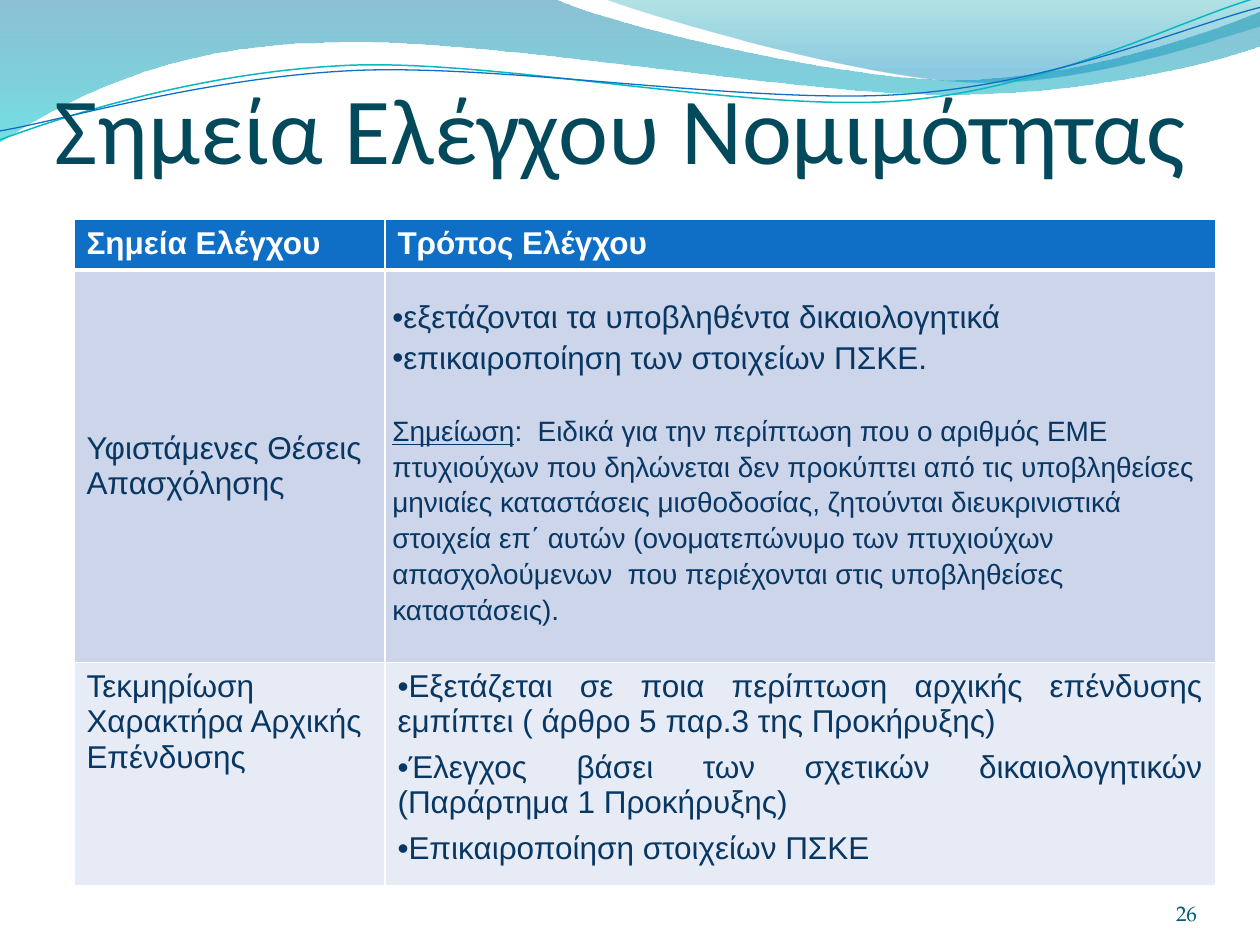
from itertools import chain

from lxml import etree
from pptx import Presentation
from pptx import util as u
from pptx.dml.color import RGBColor
from pptx.enum import text
from pptx.oxml import ns

WHITE = RGBColor(0xFF, 0xFF, 0xFF)
BLUE = RGBColor(0x0F, 0x6F, 0xC6)
NAVY = RGBColor(0x08, 0x37, 0x63)
TITLE_TEAL = RGBColor(0x03, 0x49, 0x5C)
NUMBER_TEAL = RGBColor(0x04, 0x5C, 0x75)
LINE_TEAL = RGBColor(0x0A, 0xB8, 0xBF)
BAND_DARK = RGBColor(0xCC, 0xD5, 0xEA)
BAND_LIGHT = RGBColor(0xE7, 0xEB, 0xF5)
DEEP_BLUE = RGBColor(0x00, 0x74, 0xA1)
CYAN = RGBColor(0x00, 0xC6, 0xCF)
SEA_GREEN = RGBColor(0x00, 0xA1, 0xA9)
SKY_BLUE = RGBColor(0x00, 0x8B, 0xBF)


def child(parent, tag, **attributes):
    return etree.SubElement(parent, ns.qn(tag), **attributes)


def write(paragraph, words, size=18, color=NAVY, font="Arial", bold=False,
          underline=False, align=None, before=0, spacing=None, bullet=None):
    if bullet:
        properties = paragraph._p.get_or_add_pPr()
        properties.set("marL", "0")
        properties.set("indent", "0")
        child(properties, "a:buFont", typeface=font)
        child(properties, "a:buChar", char=bullet)
    if align is not None:
        paragraph.alignment = align
    if before:
        paragraph.space_before = u.Pt(before)
    if spacing:
        paragraph.line_spacing = spacing
    run = paragraph.add_run()
    run.text = words
    run.font.size = u.Pt(size)
    run.font.name = font
    run.font.bold = bold
    run.font.underline = underline
    run.font.color.rgb = color


class Deck:
    def __init__(self, width, height):
        self.presentation = Presentation()
        self.presentation.slide_width = u.Cm(width)
        self.presentation.slide_height = u.Cm(height)
        self.slide = self.presentation.slides.add_slide(
            self.presentation.slide_layouts[6])

    def outline(self, start, segments, close):
        numbers = [u.Cm(n) for n in chain(start, *segments)]
        first, *rest = zip(numbers[::2], numbers[1::2])
        builder = self.slide.shapes.build_freeform(*first)
        builder.add_line_segments(rest, close=close)
        shape = builder.convert_to_shape()
        shape.shadow.inherit = False
        steps = iter(list(shape._element.iter(ns.qn("a:lnTo"))))
        for segment in segments:
            step = next(steps)
            if len(segment) == 6:
                step.tag = ns.qn("a:cubicBezTo")
                for extra in (next(steps), next(steps)):
                    step.append(extra[0])
                    extra.getparent().remove(extra)
        return shape

    def wave(self, start, segments, stops):
        shape = self.outline(start, segments, True)
        shape.line.fill.background()
        shape.fill.gradient()
        shape.fill.gradient_angle = 270
        for stop, (position, color, _) in zip(shape.fill.gradient_stops, stops):
            stop.position = position
            stop.color.rgb = color
        colors = shape._element.spPr.iter(ns.qn("a:srgbClr"))
        for color, (_, _, opacity) in zip(colors, stops):
            child(color, "a:alpha", val=str(opacity * 1000))

    def ripple(self, start, segments, color, width):
        shape = self.outline(start, segments, False)
        shape.rotation = 357.3
        shape.fill.background()
        shape.line.color.rgb = color
        shape.line.width = u.Pt(width)

    def label(self, words, left, top, width, height, inset_top=0, **style):
        frame = self.slide.shapes.add_textbox(
            u.Cm(left), u.Cm(top), u.Cm(width), u.Cm(height)).text_frame
        frame.word_wrap = True
        frame.vertical_anchor = text.MSO_ANCHOR.BOTTOM
        frame.margin_left = frame.margin_right = frame.margin_bottom = 0
        frame.margin_top = u.Cm(inset_top)
        write(frame.paragraphs[0], words, **style)

    def table(self, left, top, widths, heights):
        table = self.slide.shapes.add_table(
            len(heights), len(widths), u.Cm(left), u.Cm(top),
            u.Cm(sum(widths)), u.Cm(sum(heights))).table
        for column, width in zip(table.columns, widths):
            column.width = u.Cm(width)
        for row, height in zip(table.rows, heights):
            row.height = u.Cm(height)
        return table

    def cell(self, cell, fill, entries, borders):
        properties = cell._tc.get_or_add_tcPr()
        for side, width in zip("LRTB", borders):
            line = child(properties, f"a:ln{side}", w=str(u.Pt(width)))
            child(child(line, "a:solidFill"), "a:srgbClr", val=str(WHITE))
        cell.fill.solid()
        cell.fill.fore_color.rgb = fill
        frame = cell.text_frame
        for index, (words, style) in enumerate(entries):
            paragraph = frame.add_paragraph() if index else frame.paragraphs[0]
            write(paragraph, words, **style)


def main():
    deck = Deck(25.4, 19.05)
    deck.wave((0, -0.03), [
        (11.18, -0.03),
        (12.09, 0.43, 16.87, 1.6, 19.25, 1.6),
        (21.67, 1.6, 24.33, 0.66, 25.4, 0.23),
        (25.43, 0.91),
        (24.97, 1.12, 22.1, 1.93, 18.95, 1.9),
        (15.8, 1.9, 9.7, 0.71, 6.53, 0.86),
        (3.28, 0.89, 1.17, 2.11, -0.03, 2.87),
    ], [(0, DEEP_BLUE, 45), (1, CYAN, 55)])
    deck.wave((12.17, -0.03), [
        (12.93, 0.28, 17.32, 1.57, 19.53, 1.65),
        (21.74, 1.75, 24.41, 0.81, 25.4, 0.53),
        (25.4, 0),
    ], [(0, SEA_GREEN, 30), (0.8, SKY_BLUE, 45)])
    deck.ripple((-0.05, 2.22), [
        (1.19, 1.82, 4.02, 1.04, 7.05, 1.05),
        (10.05, 1.07, 15.02, 2.37, 18.08, 2.29),
        (21.13, 2.2, 23.86, 0.91, 25.41, 0.55),
    ], LINE_TEAL, 0.85)
    deck.ripple((-0.04, 2.04), [
        (1.16, 1.9, 4.17, 1.15, 7.2, 1.16),
        (10.25, 1.18, 15.13, 2.23, 18.19, 2.16),
        (21.22, 2.1, 23.93, 1.06, 25.45, 0.75),
    ], BLUE, 0.75)
    deck.label("Σημεία Ελέγχου Νομιμότητας", 1.1, 2.12, 22.86, 1.58,
               inset_top=0.13, size=54, font="Calibri", color=TITLE_TEAL)

    heading = dict(color=WHITE, bold=True)
    check = dict(bullet="•", spacing=1.15)
    proof = dict(bullet="•", align=text.PP_ALIGN.JUSTIFY)
    next_proof = dict(proof, before=6)
    rows = [
        (BLUE, (1, 1, 1, 3), [
            [("Σημεία Ελέγχου", heading)],
            [("Τρόπος Ελέγχου", heading)]]),
        (BAND_DARK, (1, 1, 3, 1), [
            [("Υφιστάμενες Θέσεις Απασχόλησης", {})],
            [("εξετάζονται τα υποβληθέντα δικαιολογητικά", check),
             ("επικαιροποίηση των στοιχείων ΠΣΚΕ.", check),
             ("Σημείωση", dict(size=16, underline=True, spacing=1.15,
                               before=20.5))]]),
        (BAND_LIGHT, (1, 1, 1, 1), [
            [("Τεκμηρίωση Χαρακτήρα Αρχικής Επένδυσης", {})],
            [("Εξετάζεται σε ποια περίπτωση αρχικής επένδυσης εμπίπτει "
              "( άρθρο 5 παρ.3 της Προκήρυξης)", proof),
             ("Έλεγχος βάσει των σχετικών δικαιολογητικών "
              "(Παράρτημα 1 Προκήρυξης) ", next_proof),
             ("Επικαιροποίηση στοιχείων ΠΣΚΕ ", next_proof)]]),
    ]
    checks = deck.table(1.49, 4.42, [6.27, 16.74], [1.02, 7.92, 4.49])
    for row, (fill, borders, contents) in enumerate(rows):
        for column, entries in enumerate(contents):
            deck.cell(checks.cell(row, column), fill, entries, borders)

    checks.cell(1, 0).vertical_anchor = text.MSO_ANCHOR.MIDDLE
    positions = checks.cell(1, 1)
    positions.margin_left = positions.margin_right = u.Cm(0.15)
    positions.margin_top = u.Cm(0.5)
    positions.margin_bottom = u.Cm(0.2)
    write(positions.text_frame.paragraphs[-1],
          ":  Ειδικά για την περίπτωση που ο αριθμός ΕΜΕ πτυχιούχων που "
          "δηλώνεται δεν προκύπτει από τις υποβληθείσες μηνιαίες καταστάσεις "
          "μισθοδοσίας, ζητούνται διευκρινιστικά στοιχεία επ΄ αυτών "
          "(ονοματεπώνυμο των πτυχιούχων απασχολούμενων  που περιέχονται "
          "στις υποβληθείσες καταστάσεις).", size=16)

    deck.label("26", 22.02, 17.65, 2.11, 1.02, size=12, color=NUMBER_TEAL,
               font="TeX Gyre Pagella", align=text.PP_ALIGN.RIGHT)
    deck.presentation.save("out.pptx")


if __name__ == "__main__":
    main()
